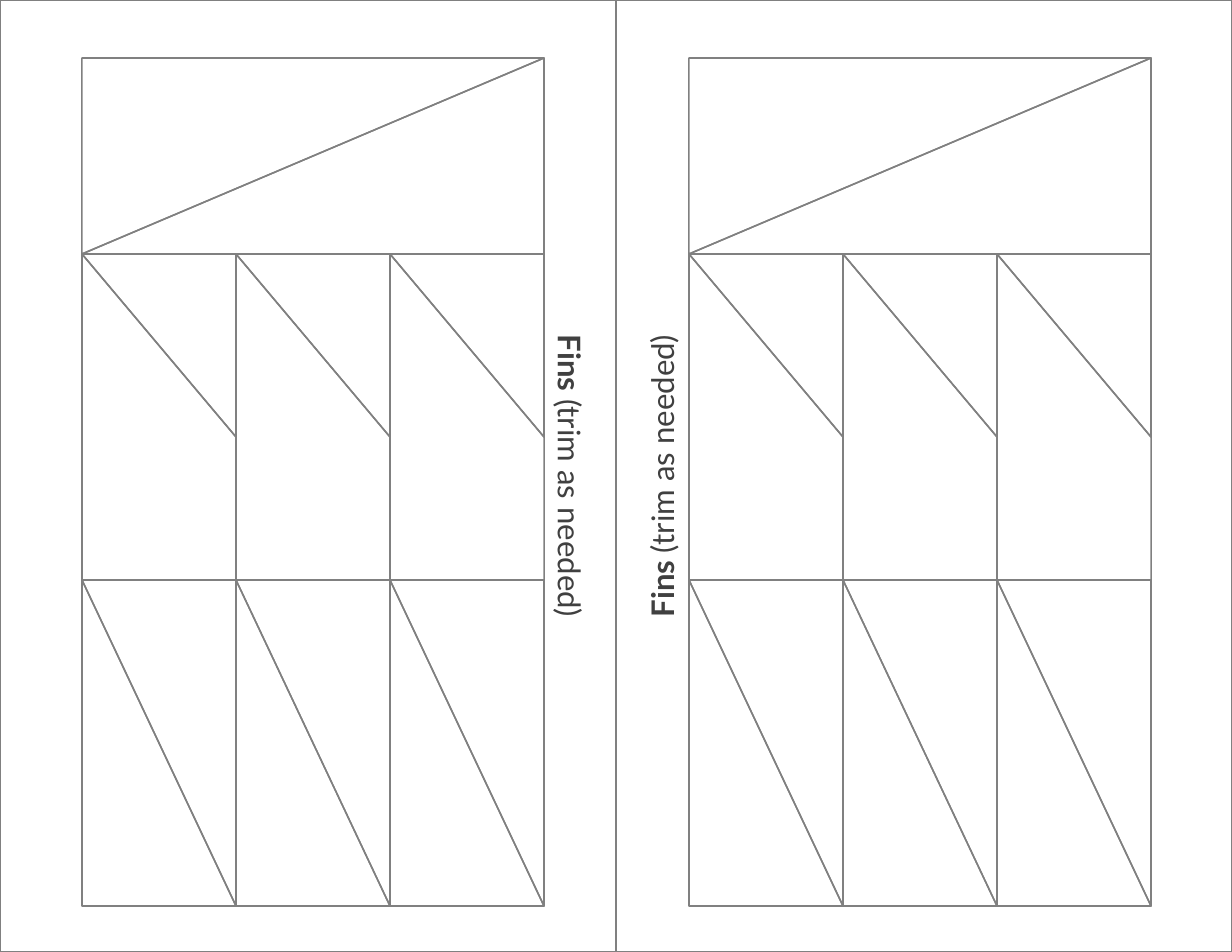
from lxml.etree import SubElement
from pptx import Presentation
from pptx.dml.color import RGBColor
from pptx.enum.shapes import MSO_SHAPE
from pptx.enum.text import MSO_ANCHOR, MSO_AUTO_SIZE, PP_ALIGN
from pptx.oxml import parse_xml
from pptx.oxml.ns import nsdecls, qn
from pptx.util import Emu, Pt

EMU_PER_PX = 914400 / 112
PAGE_W, PAGE_H = 1232, 952
GRAY = RGBColor(0x80, 0x80, 0x80)
DARK = RGBColor(0x40, 0x40, 0x40)

FIN_W, FIN_H, TIP_H = 154, 326, 183
FINS_PER_ROW = 3
PANEL_W = FINS_PER_ROW * FIN_W
PANEL_TOP, LARGE_FIN_H = 58, 196
LABEL_H = 49


def px(n):
    return Emu(round(n * EMU_PER_PX))


def outline(sp):
    sp.shadow.inherit = False
    sp.fill.background()
    sp.line.color.rgb = GRAY
    sp.line.width = Pt(1)


def add_triangle(slide, x, y, w, h, rotation=0):
    sp = slide.shapes.add_shape(MSO_SHAPE.RIGHT_TRIANGLE, px(x), px(y), px(w), px(h))
    sp.rotation = rotation
    outline(sp)


def add_clipped_fin(slide, x, y):
    """Add a fin whose top edge slopes down to the right."""
    builder = slide.shapes.build_freeform(x, y, EMU_PER_PX)
    builder.add_line_segments([
        (x + FIN_W, y + TIP_H), (x + FIN_W, y + FIN_H), (x, y + FIN_H),
    ])
    outline(builder.convert_to_shape())


def add_large_fins(slide, x, y):
    """Add two triangles, turned on their sides, that fill the panel width."""
    left = x + (PANEL_W - LARGE_FIN_H) / 2
    top = y + (LARGE_FIN_H - PANEL_W) / 2
    for rotation in (90, 270):
        add_triangle(slide, left, top, LARGE_FIN_H, PANEL_W, rotation)


def add_panel(slide, x):
    clipped_y = PANEL_TOP + LARGE_FIN_H
    triangle_y = clipped_y + FIN_H
    for i in range(FINS_PER_ROW):
        fin_x = x + i * FIN_W
        for rotation in (0, 180):
            add_triangle(slide, fin_x, triangle_y, FIN_W, FIN_H, rotation)
        add_clipped_fin(slide, fin_x, clipped_y)
        add_triangle(slide, fin_x, clipped_y, FIN_W, TIP_H, 180)
    add_large_fins(slide, x, PANEL_TOP)


def add_label(slide, center_x, rotation):
    box = slide.shapes.add_textbox(
        px(center_x - PAGE_H / 2), px((PAGE_H - LABEL_H) / 2), px(PAGE_H), px(LABEL_H))
    box.rotation = rotation
    tf = box.text_frame
    tf.word_wrap = True
    tf.auto_size = MSO_AUTO_SIZE.SHAPE_TO_FIT_TEXT
    tf.vertical_anchor = MSO_ANCHOR.TOP
    p = tf.paragraphs[0]
    p.alignment = PP_ALIGN.CENTER
    p.font.name = "Lato"
    p.font.size = Pt(20)
    p.font.color.rgb = DARK
    for text, bold in (("Fins ", True), ("(trim as needed)", False)):
        r = p.add_run()
        r.text = text
        r.font.name = "Lato"
        r.font.size = Pt(20)
        r.font.color.rgb = DARK
        r.font.bold = bold


def set_borders(cell):
    tc_pr = cell._tc.get_or_add_tcPr()
    for i, side in enumerate("LRTB"):
        ln = parse_xml(f'<a:ln{side} {nsdecls("a")} w="{Pt(1)}"/>')
        fill = SubElement(ln, qn("a:solidFill"))
        SubElement(fill, qn("a:srgbClr"), val=str(GRAY))
        tc_pr.insert(i, ln)


def add_page_halves(slide):
    table = slide.shapes.add_table(1, 2, 0, 0, px(PAGE_W), px(PAGE_H)).table
    table.first_row = False
    table.horz_banding = False
    for cell in table.iter_cells():
        cell.fill.background()
        set_borders(cell)


def main():
    prs = Presentation()
    prs.slide_width, prs.slide_height = px(PAGE_W), px(PAGE_H)
    slide = prs.slides.add_slide(prs.slide_layouts[6])
    add_page_halves(slide)
    for panel_x, label_x, rotation in ((82, 570, 90), (689, 662, 270)):
        add_panel(slide, panel_x)
        add_label(slide, label_x, rotation)
    prs.save("out.pptx")


if __name__ == "__main__":
    main()
